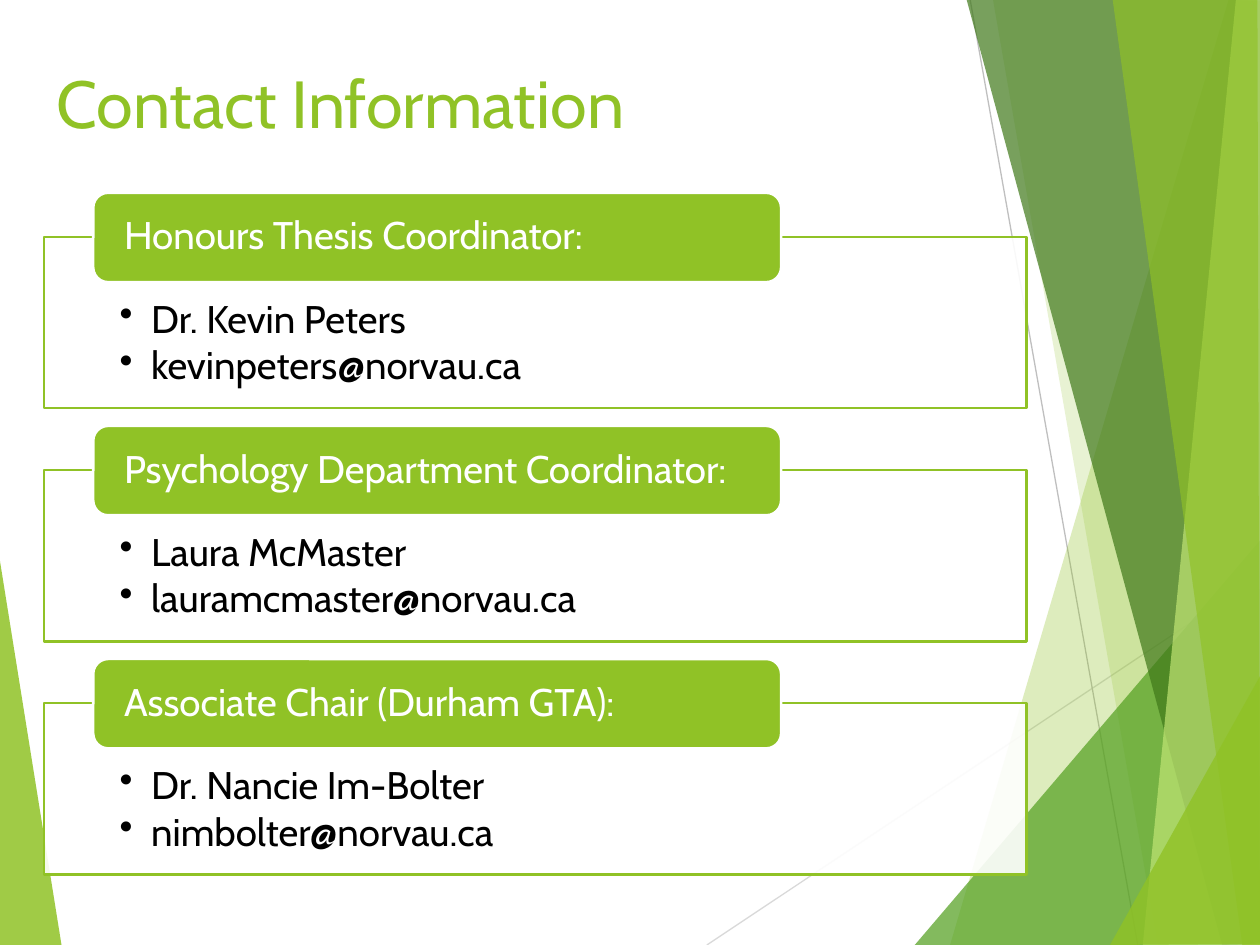
from lxml.etree import SubElement
from pptx import Presentation
from pptx.dml.color import RGBColor
from pptx.enum.shapes import MSO_CONNECTOR, MSO_SHAPE
from pptx.enum.text import MSO_ANCHOR, PP_ALIGN
from pptx.oxml.ns import qn
from pptx.util import Inches, Pt

FONT = "Cabin"
LIME = RGBColor(0x90, 0xC2, 0x26)
GREEN = RGBColor(0x54, 0xA0, 0x21)
DARK_GREEN = RGBColor(0x3F, 0x78, 0x19)
PALE_LIME = RGBColor(0xC0, 0xE4, 0x74)
LIGHT_GREY = RGBColor(0xD9, 0xD9, 0xD9)
GREY = RGBColor(0xBF, 0xBF, 0xBF)
WHITE = RGBColor(0xFF, 0xFF, 0xFF)
BLACK = RGBColor(0x00, 0x00, 0x00)

# Background rays: start, end, colour, width
RAYS = [
    ((5.61, 7.5), (10.01, 4.57), LIGHT_GREY),
    ((7.7, 0), (9.03, 7.5), GREY),
]

# Background facets: corners, colour, opacity in percent
LEFT_FACET = ([(-0.01, 4.39), (0.49, 7.51), (-0.01, 7.5)], LIME, 85)
RIGHT_FACETS = [
    ([(9.75, 0), (7.54, 7.5), (10.02, 7.51), (10.01, 0.01)], LIME, 30),
    ([(7.88, -0.01), (9.19, 7.5), (10.01, 7.5), (10.01, -0.01)], LIME, 20),
    ([(7.26, 7.5), (10, 4.29), (10.01, 7.5)], GREEN, 72),
    ([(7.67, -0.01), (9.7, 7.5), (10.01, 7.49), (10.01, -0.01)], DARK_GREEN, 70),
    ([(9.81, -0.01), (9.07, 7.5), (10.01, 7.5), (10, -0.01)], PALE_LIME, 70),
    ([(8.83, -0.01), (9.86, 7.5), (10, 7.5), (9.98, -0.01)], LIME, 65),
    ([(8.81, 7.5), (10.01, 5.35), (10.01, 7.49)], LIME, 80),
]

CONTACTS = [
    ("Honours Thesis Coordinator:", ["Dr. Kevin Peters", "kevinpeters@norvau.ca"]),
    ("Psychology Department Coordinator:", ["Laura McMaster", "lauramcmaster@norvau.ca"]),
    ("Associate Chair (Durham GTA):", ["Dr. Nancie Im-Bolter", "nimbolter@norvau.ca"]),
]
FIRST_HEADER_TOP = 1.53
CONTACT_STEP = 1.85
DETAILS_OFFSET = 0.35


def paint(shape, color, opacity=100, outline=None):
    shape.shadow.inherit = False
    shape.fill.solid()
    shape.fill.fore_color.rgb = color
    if opacity < 100:
        solid_color = shape.fill._xPr.find(qn("a:solidFill"))[0]
        SubElement(solid_color, qn("a:alpha"), val=str(opacity * 1000))
    if outline is None:
        shape.line.fill.background()
    else:
        shape.line.color.rgb = outline
        shape.line.width = Pt(1.5)


def add_bullet(paragraph):
    properties = paragraph._p.get_or_add_pPr()
    properties.set("marL", str(Inches(0.25)))
    properties.set("indent", str(Inches(-0.25)))
    SubElement(properties, qn("a:buChar"), char="•")


def write_text(shape, lines, *, size, color, insets, anchor=MSO_ANCHOR.TOP,
               line_spacing=1.0, space_after=0, bullets=False):
    frame = shape.text_frame
    frame.word_wrap = True
    frame.vertical_anchor = anchor
    (frame.margin_left, frame.margin_top,
     frame.margin_right, frame.margin_bottom) = map(Inches, insets)
    for index, line in enumerate(lines):
        paragraph = frame.paragraphs[0] if index == 0 else frame.add_paragraph()
        paragraph.alignment = PP_ALIGN.LEFT
        paragraph.line_spacing = line_spacing
        paragraph.space_after = Pt(space_after)
        if bullets:
            add_bullet(paragraph)
        run = paragraph.add_run()
        run.text = line
        run.font.name = FONT
        run.font.size = Pt(size)
        run.font.color.rgb = color


def add_facet(slide, corners, color, opacity):
    points = [(Inches(x), Inches(y)) for x, y in corners]
    builder = slide.shapes.build_freeform(*points[0])
    builder.add_line_segments(points[1:], close=True)
    paint(builder.convert_to_shape(), color, opacity)


def add_ray(slide, start, end, color):
    ray = slide.shapes.add_connector(
        MSO_CONNECTOR.STRAIGHT, *map(Inches, start + end))
    ray.line.color.rgb = color
    ray.line.width = Pt(0.75)
    SubElement(ray._element.spPr, qn("a:effectLst"))


def add_title(slide, text):
    title = slide.shapes.add_textbox(
        Inches(0.35), Inches(0.44), Inches(7.8), Inches(0.87))
    write_text(title, [text], size=38, color=LIME, insets=(0.1, 0.05, 0.1, 0.05))


def add_contact(slide, top, role, details):
    # Outlined panel with the name and address
    panel = slide.shapes.add_shape(
        MSO_SHAPE.RECTANGLE, Inches(0.35), Inches(top + DETAILS_OFFSET),
        Inches(7.8), Inches(1.36))
    paint(panel, WHITE, 90, outline=LIME)
    write_text(panel, details, size=22, color=BLACK, insets=(0.6, 0.5, 0.6, 0.17),
               line_spacing=0.9, space_after=3, bullets=True)

    # Rounded header over the panel's top edge
    header = slide.shapes.add_shape(
        MSO_SHAPE.ROUNDED_RECTANGLE, Inches(0.74), Inches(top),
        Inches(5.46), Inches(0.71))
    paint(header, LIME, outline=WHITE)
    write_text(header, [role], size=22, color=WHITE, insets=(0.21, 0, 0.21, 0),
               anchor=MSO_ANCHOR.MIDDLE, line_spacing=0.9)


def main():
    presentation = Presentation()
    presentation.slide_width = Inches(10)
    presentation.slide_height = Inches(7.5)
    slide = presentation.slides.add_slide(presentation.slide_layouts[6])

    # Background decoration
    add_facet(slide, *LEFT_FACET)
    for ray in RAYS:
        add_ray(slide, *ray)
    for facet in RIGHT_FACETS:
        add_facet(slide, *facet)

    # Title and contact list
    add_title(slide, "Contact Information")
    for index, (role, details) in enumerate(CONTACTS):
        add_contact(slide, FIRST_HEADER_TOP + index * CONTACT_STEP, role, details)

    presentation.save("out.pptx")


if __name__ == "__main__":
    main()
